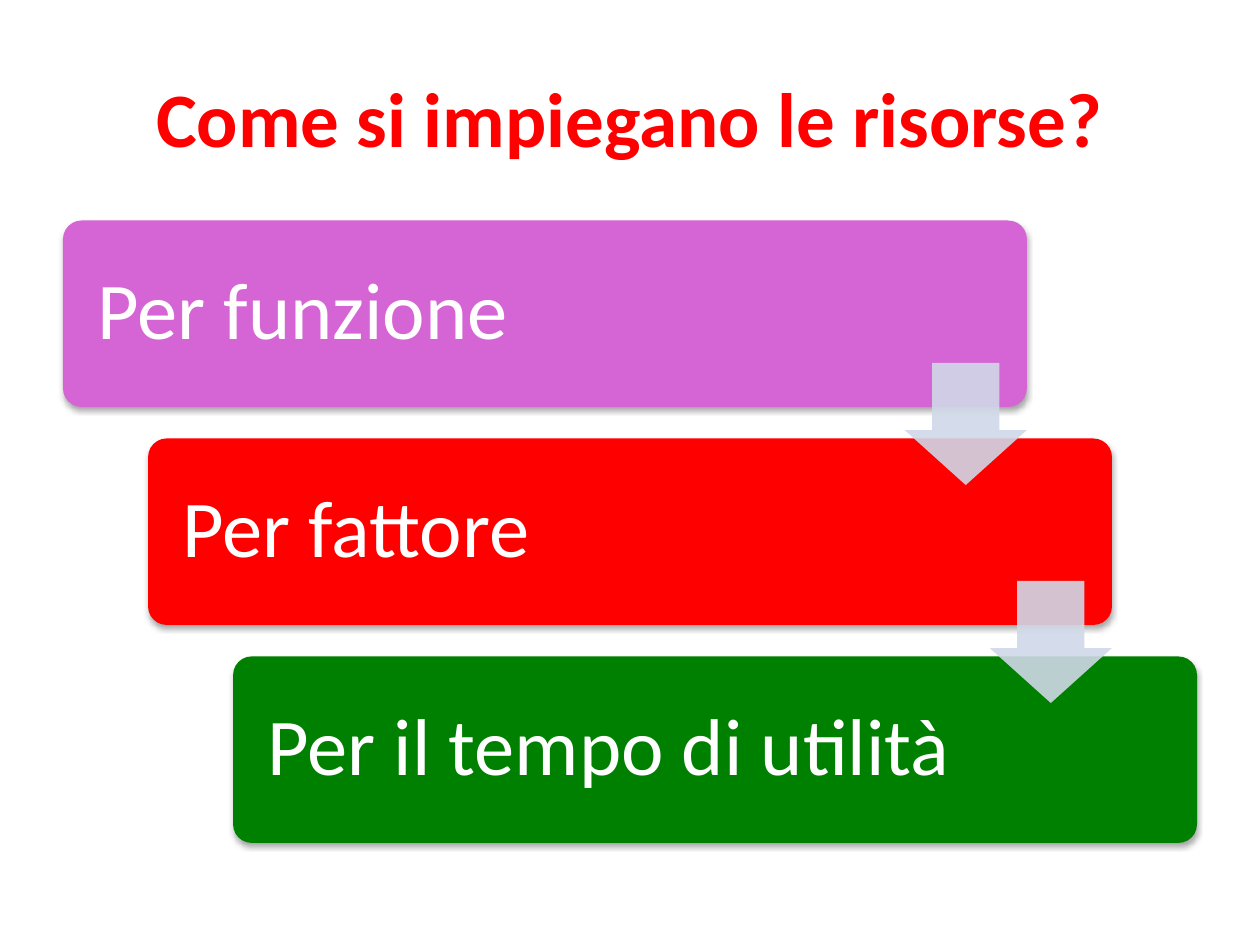
from dataclasses import dataclass

from lxml.etree import SubElement
from pptx import Presentation
from pptx.dml.color import RGBColor
from pptx.enum.shapes import MSO_SHAPE
from pptx.enum.text import MSO_ANCHOR, PP_ALIGN
from pptx.oxml.ns import qn
from pptx.util import Inches, Pt


@dataclass(frozen=True)
class Theme:
    font: str = "Calibri"
    title_size: int = 44
    step_size: int = 46
    title: str = "FF0000"
    step_text: str = "FFFFFF"
    arrow: str = "D0D8E8"
    shadow: str = "000000"


@dataclass(frozen=True)
class Step:
    text: str
    color: str


THEME = Theme()
STEPS = [
    Step("Per funzione", "D565D5"),
    Step("Per fattore", "FF0000"),
    Step("Per il tempo di utilità", "008000"),
]

# Staircase geometry, in inches
LEFT, TOP = 0.5, 1.75
STEP_W, STEP_H = 7.65, 1.48
DX, DY = 0.675, 1.73
ARROW = 0.97
ARROW_TOP = 2.88
INSET = 0.23


def set_text(tf, text: str, *, size: int, color: str, bold: bool = False,
             align=PP_ALIGN.LEFT, line_spacing: float = 1.0) -> None:
    tf.word_wrap = True
    tf.vertical_anchor = MSO_ANCHOR.MIDDLE
    p = tf.paragraphs[0]
    p.alignment = align
    p.line_spacing = line_spacing
    r = p.add_run()
    r.text = text
    r.font.name = THEME.font
    r.font.size = Pt(size)
    r.font.bold = bold
    r.font.color.rgb = RGBColor.from_string(color)


def add_filled(slide, kind, x: float, y: float, w: float, h: float,
               color: str, adjustments: list[float]):
    sp = slide.shapes.add_shape(kind, Inches(x), Inches(y), Inches(w), Inches(h))
    for i, value in enumerate(adjustments):
        sp.adjustments[i] = value
    sp.fill.solid()
    sp.fill.fore_color.rgb = RGBColor.from_string(color)
    sp.line.fill.background()
    sp.shadow.inherit = False
    return sp


def set_alpha(color_element, percent: int) -> None:
    SubElement(color_element, qn("a:alpha"), val=str(percent * 1000))


def add_shadow(sp) -> None:
    effects = sp.element.spPr.find(qn("a:effectLst"))
    shadow = SubElement(effects, qn("a:outerShdw"), blurRad=str(Pt(3.1)),
                        dist=str(Pt(1.8)), dir="5400000", rotWithShape="0")
    set_alpha(SubElement(shadow, qn("a:srgbClr"), val=THEME.shadow), 35)


def add_step(slide, index: int, step: Step) -> None:
    sp = add_filled(slide, MSO_SHAPE.ROUNDED_RECTANGLE, LEFT + index * DX,
                    TOP + index * DY, STEP_W, STEP_H, step.color, [0.1])
    add_shadow(sp)
    tf = sp.text_frame
    tf.margin_left = tf.margin_right = Inches(INSET)
    set_text(tf, step.text, size=THEME.step_size, color=THEME.step_text,
             line_spacing=0.9)


def add_arrow(slide, index: int) -> None:
    # Each arrow is flush with the right edge of the step it leaves
    x = LEFT + STEP_W - ARROW + index * DX
    sp = add_filled(slide, MSO_SHAPE.DOWN_ARROW, x, ARROW_TOP + index * DY,
                    ARROW, ARROW, THEME.arrow, [0.55, 0.45])
    set_alpha(sp.element.spPr.find(qn("a:solidFill"))[0], 90)


def main() -> None:
    prs = Presentation()
    prs.slide_width, prs.slide_height = Inches(10), Inches(7.5)
    slide = prs.slides.add_slide(prs.slide_layouts[5])

    # Title
    title = slide.shapes.title
    title.left, title.top = Inches(0.5), Inches(0.3)
    title.width, title.height = Inches(9), Inches(1.25)
    set_text(title.text_frame, "Come si impiegano le risorse?",
             size=THEME.title_size, color=THEME.title, bold=True,
             align=PP_ALIGN.CENTER)

    # Steps, with the arrows in front of them
    for i, step in enumerate(STEPS):
        add_step(slide, i, step)
    for i in range(len(STEPS) - 1):
        add_arrow(slide, i)

    prs.save("out.pptx")


if __name__ == "__main__":
    main()
